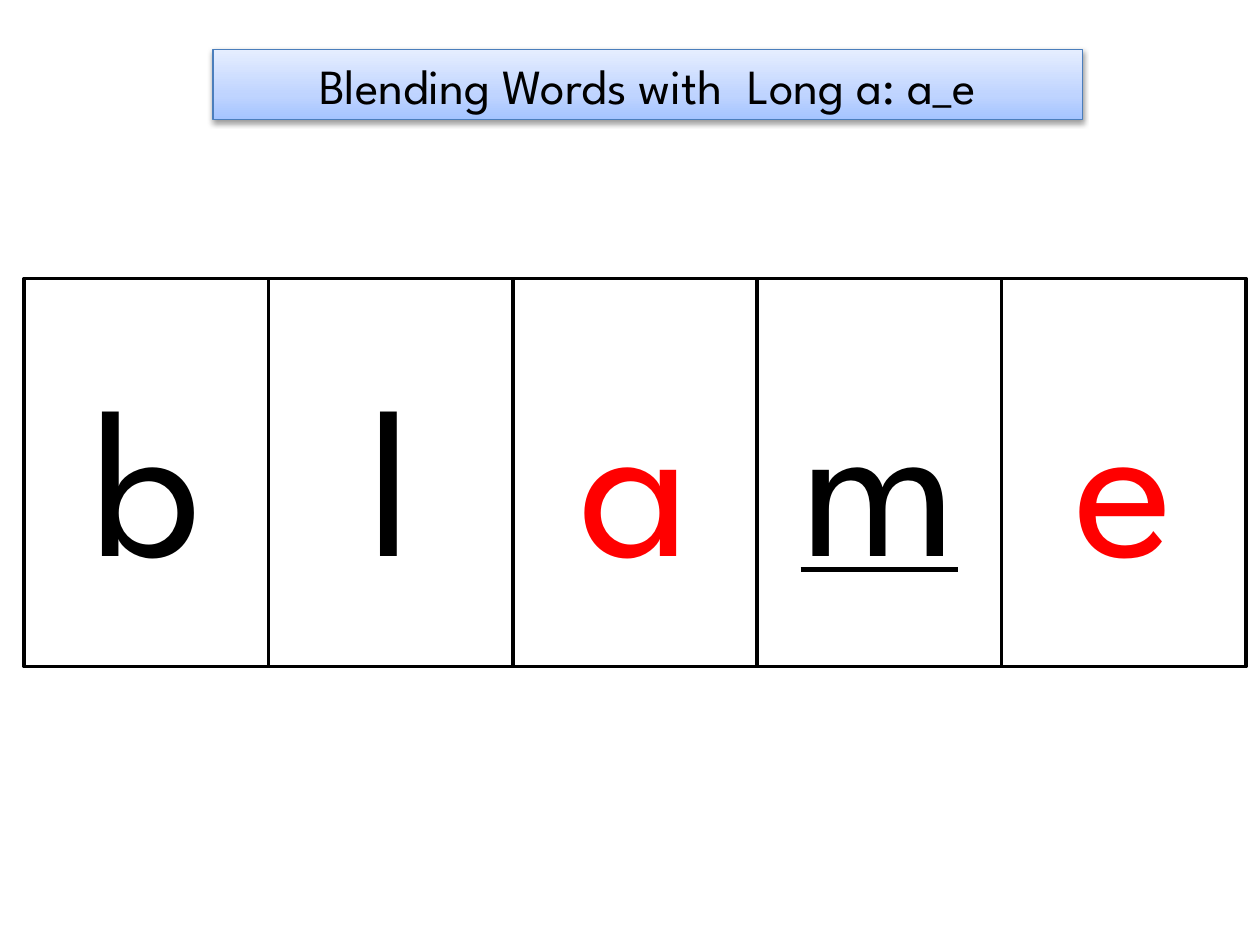
from dataclasses import dataclass

from lxml import etree
from pptx import Presentation
from pptx.dml.color import RGBColor
from pptx.enum.shapes import MSO_SHAPE
from pptx.enum.text import MSO_ANCHOR, MSO_AUTO_SIZE, PP_ALIGN
from pptx.oxml.ns import qn
from pptx.util import Inches, Pt

RECTANGLE = MSO_SHAPE.RECTANGLE
MIDDLE = MSO_ANCHOR.MIDDLE
CENTER = PP_ALIGN.CENTER
NO_AUTOFIT = MSO_AUTO_SIZE.NONE
TITLE_ONLY = 5


@dataclass(frozen=True)
class Theme:
    font: str = "League Spartan"
    title_size: int = 28
    letter_size: int = 120
    ink: str = "000000"
    vowel: str = "FF0000"
    card: str = "FFFFFF"
    banner_line: str = "4B7EBC"
    banner_stops: tuple = ((0, "A4C4FF"), (35, "BFD4FF"), (100, "E6EEFF"))


def write_text(sp, text, font, size, color, underline=False):
    tf = sp.text_frame
    tf.word_wrap = True
    tf.auto_size = NO_AUTOFIT
    tf.vertical_anchor = MIDDLE
    p = tf.paragraphs[0]
    p.alignment = CENTER
    r = p.add_run()
    r.text = text
    r.font.name = font
    r.font.size = Pt(size)
    r.font.color.rgb = RGBColor.from_string(color)
    if underline:
        r.font.underline = True


def add_color(parent, color):
    return etree.SubElement(parent, qn("a:srgbClr"), val=color)


class SlideBuilder:
    def __init__(self, slide, theme):
        self.slide = slide
        self.theme = theme

    def outline(self, sp, color, width):
        sp.line.color.rgb = RGBColor.from_string(color)
        sp.line.width = Pt(width)

    def gradient(self, sp, stops):
        sp.fill.gradient()
        sp.fill.gradient_angle = 90
        stop_list = sp.element.spPr.find(qn("a:gradFill")).find(qn("a:gsLst"))
        for stop in list(stop_list):
            stop_list.remove(stop)
        for percent, color in stops:
            stop = etree.SubElement(stop_list, qn("a:gs"), pos=str(percent * 1000))
            add_color(stop, color)

    def drop_shadow(self, sp, color, opacity, blur, distance):
        effects = etree.SubElement(sp.element.spPr, qn("a:effectLst"))
        shadow = etree.SubElement(
            effects, qn("a:outerShdw"), blurRad=str(Pt(blur)),
            dist=str(Pt(distance)), dir=str(90 * 60000), rotWithShape="0")
        etree.SubElement(add_color(shadow, color), qn("a:alpha"), val=str(opacity * 1000))

    def title(self, text, left, top, width, height):
        t = self.theme
        sp = self.slide.shapes.title
        sp.left, sp.top = Inches(left), Inches(top)
        sp.width, sp.height = Inches(width), Inches(height)
        self.gradient(sp, t.banner_stops)
        self.outline(sp, t.banner_line, 0.75)
        self.drop_shadow(sp, t.ink, opacity=38, blur=3.1, distance=1.6)
        write_text(sp, text, t.font, t.title_size, t.ink)

    def letter_card(self, letter, left, top, width, height, color, underline):
        t = self.theme
        sp = self.slide.shapes.add_shape(
            RECTANGLE, Inches(left), Inches(top), Inches(width), Inches(height))
        sp.shadow.inherit = False
        sp.fill.solid()
        sp.fill.fore_color.rgb = RGBColor.from_string(t.card)
        self.outline(sp, t.ink, 2)
        write_text(sp, letter, t.font, t.letter_size, color, underline)


def main():
    prs = Presentation()
    prs.slide_width, prs.slide_height = Inches(10), Inches(7.5)
    theme = Theme()
    s = SlideBuilder(prs.slides.add_slide(prs.slide_layouts[TITLE_ONLY]), theme)

    s.title("Blending Words with  Long a: a_e", 1.69, 0.39, 6.9, 0.56)

    card_width = 1.94
    for i, letter in enumerate("blame"):
        color = theme.vowel if letter in "ae" else theme.ink
        s.letter_card(letter, 0.19 + i * card_width, 2.21, card_width, 3.08,
                      color, underline=letter == "m")

    prs.save("out.pptx")


if __name__ == "__main__":
    main()
